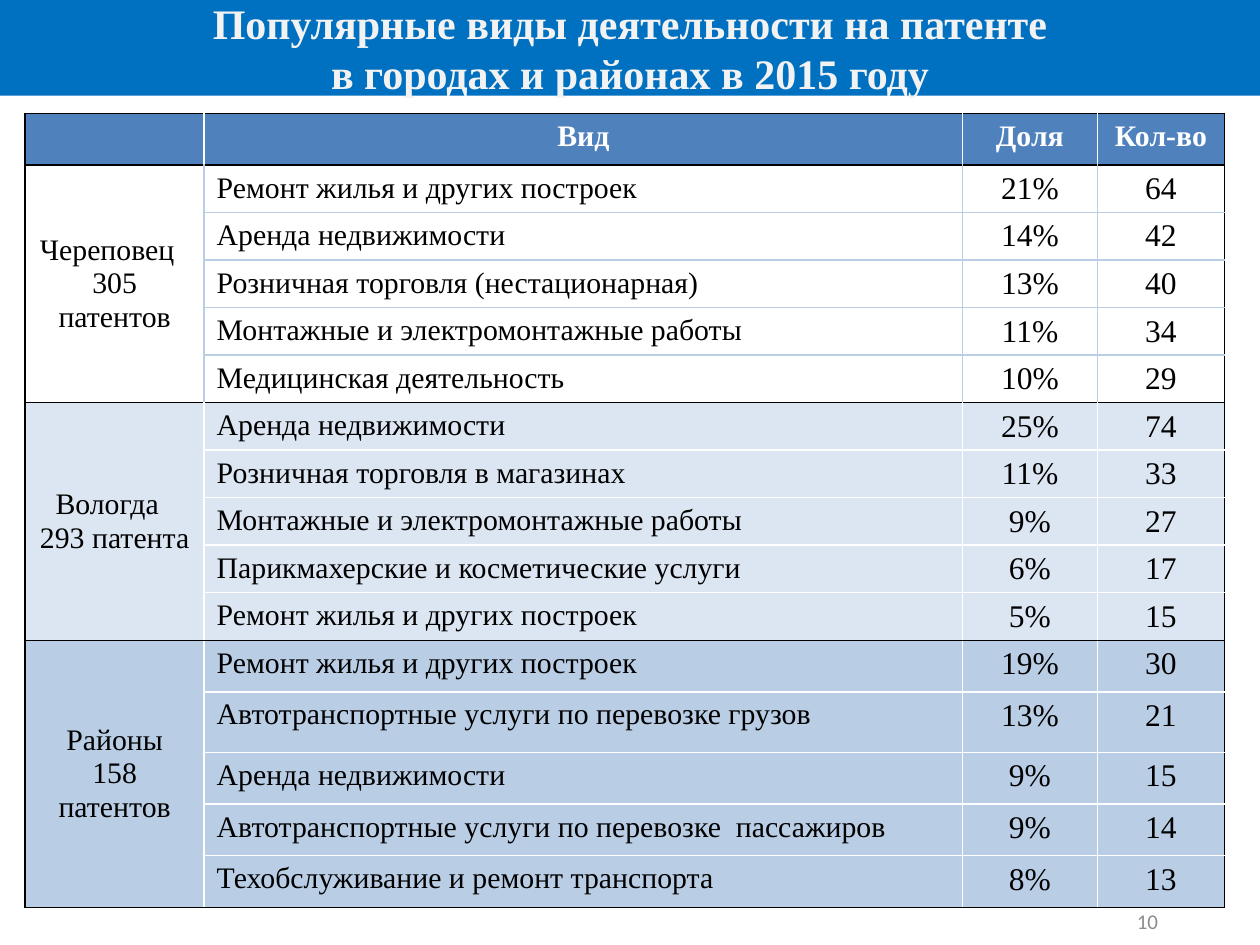
"""Build a slide with a table of popular patent activities by city and district."""
from lxml.etree import SubElement
from pptx import Presentation
from pptx.dml.color import RGBColor
from pptx.enum.text import MSO_ANCHOR, PP_ALIGN
from pptx.oxml.ns import qn
from pptx.util import Inches, Pt

COLORS = {"banner": "0070C0", "title": "F2F2F2", "header": "4F81BD", "white": "FFFFFF",
          "black": "000000", "light": "DCE6F2", "medium": "B9CDE5", "number": "8C8C8C"}
SERIF = "Times New Roman"
HEADINGS = ["", "Вид", "Доля", "Кол-во"]
GROUPS = [
    ("Череповец  \n305 патентов", None, "medium", [
        ("Ремонт жилья и других построек", "21%", "64"),
        ("Аренда недвижимости", "14%", "42"),
        ("Розничная торговля (нестационарная)", "13%", "40"),
        ("Монтажные и электромонтажные работы", "11%", "34"),
        ("Медицинская деятельность", "10%", "29")]),
    ("Вологда  \n293 патента", "light", "white", [
        ("Аренда недвижимости", "25%", "74"),
        ("Розничная торговля в магазинах", "11%", "33"),
        ("Монтажные и электромонтажные работы", "9%", "27"),
        ("Парикмахерские и косметические услуги", "6%", "17"),
        ("Ремонт жилья и других построек", "5%", "15")]),
    ("Районы\n158 патентов", "medium", "white", [
        ("Ремонт жилья и других построек", "19%", "30"),
        ("Автотранспортные услуги по перевозке грузов", "13%", "21"),
        ("Аренда недвижимости", "9%", "15"),
        ("Автотранспортные услуги по перевозке  пассажиров", "9%", "14"),
        ("Техобслуживание и ремонт транспорта", "8%", "13")]),
]
COLUMN_WIDTHS = [1.42, 6.02, 1.07, 1.01]
ROW_HEIGHTS = [0.41] + [0.37] * 10 + [0.41, 0.48, 0.41, 0.41, 0.41]


def write(frame, text, size, color, align, font=SERIF, bold=False):
    frame.text = text
    for para in frame.paragraphs:
        para.alignment = align
        for span in para.runs:
            span.font.name = font
            span.font.size = Pt(size)
            span.font.bold = bold
            span.font.color.rgb = RGBColor.from_string(COLORS[color])


def style_cell(cell, fill, borders):
    properties = cell._tc.get_or_add_tcPr()
    for side, color in zip("LRTB", borders):
        line = SubElement(properties, qn(f"a:ln{side}"), w=str(Pt(1)))
        solid = SubElement(line, qn("a:solidFill"))
        SubElement(solid, qn("a:srgbClr"), val=COLORS[color])
    if fill:
        cell.fill.solid()
        cell.fill.fore_color.rgb = RGBColor.from_string(COLORS[fill])
    else:
        cell.fill.background()


deck = Presentation()
deck.slide_width, deck.slide_height = Inches(10), Inches(7.5)
page = deck.slides.add_slide(deck.slide_layouts[5])

title = page.shapes.title
title.left, title.top, title.width, title.height = 0, 0, Inches(10), Inches(0.76)
title.fill.solid()
title.fill.fore_color.rgb = RGBColor.from_string(COLORS["banner"])
title.text_frame.vertical_anchor = MSO_ANCHOR.MIDDLE
write(title.text_frame, "Популярные виды деятельности на патенте\nв городах и районах в 2015 году",
      24, "title", PP_ALIGN.CENTER, bold=True)

table = page.shapes.add_table(len(ROW_HEIGHTS), len(COLUMN_WIDTHS), Inches(0.2), Inches(0.9),
                              Inches(sum(COLUMN_WIDTHS)), Inches(sum(ROW_HEIGHTS))).table
table.horz_banding = False
for column, width in zip(table.columns, COLUMN_WIDTHS):
    column.width = Inches(width)
for row, height in zip(table.rows, ROW_HEIGHTS):
    row.height = Inches(height)

for index, heading in enumerate(HEADINGS):
    cell = table.cell(0, index)
    sides = ("black" if index == 0 else "white", "black" if index == 3 else "white")
    style_cell(cell, "header", (*sides, "black", "black"))
    write(cell.text_frame, heading, 17, "white", PP_ALIGN.CENTER, bold=True)

first_row = 1
for label, fill, inner, activities in GROUPS:
    last_row = first_row + len(activities) - 1
    for row_index, activity in enumerate(activities, first_row):
        top = "black" if row_index == first_row else inner
        bottom = "black" if row_index == last_row else inner
        style_cell(table.cell(row_index, 0), fill, ("black", inner, "black", "black"))
        for index, text in enumerate(activity, 1):
            cell = table.cell(row_index, index)
            style_cell(cell, fill, (inner, "black" if index == 3 else inner, top, bottom))
            write(cell.text_frame, text, 17 if index == 1 else 18, "black",
                  PP_ALIGN.LEFT if index == 1 else PP_ALIGN.CENTER)
    place = table.cell(first_row, 0)
    place.merge(table.cell(last_row, 0))
    place.vertical_anchor = MSO_ANCHOR.MIDDLE
    write(place.text_frame, label, 17, "black", PP_ALIGN.CENTER)
    first_row = last_row + 1

number = page.shapes.add_textbox(Inches(6.96), Inches(7.11), Inches(2.33), Inches(0.4))
number.text_frame.word_wrap = True
number.text_frame.vertical_anchor = MSO_ANCHOR.MIDDLE
write(number.text_frame, "10", 12, "number", PP_ALIGN.RIGHT, font="Calibri")

deck.save("out.pptx")
